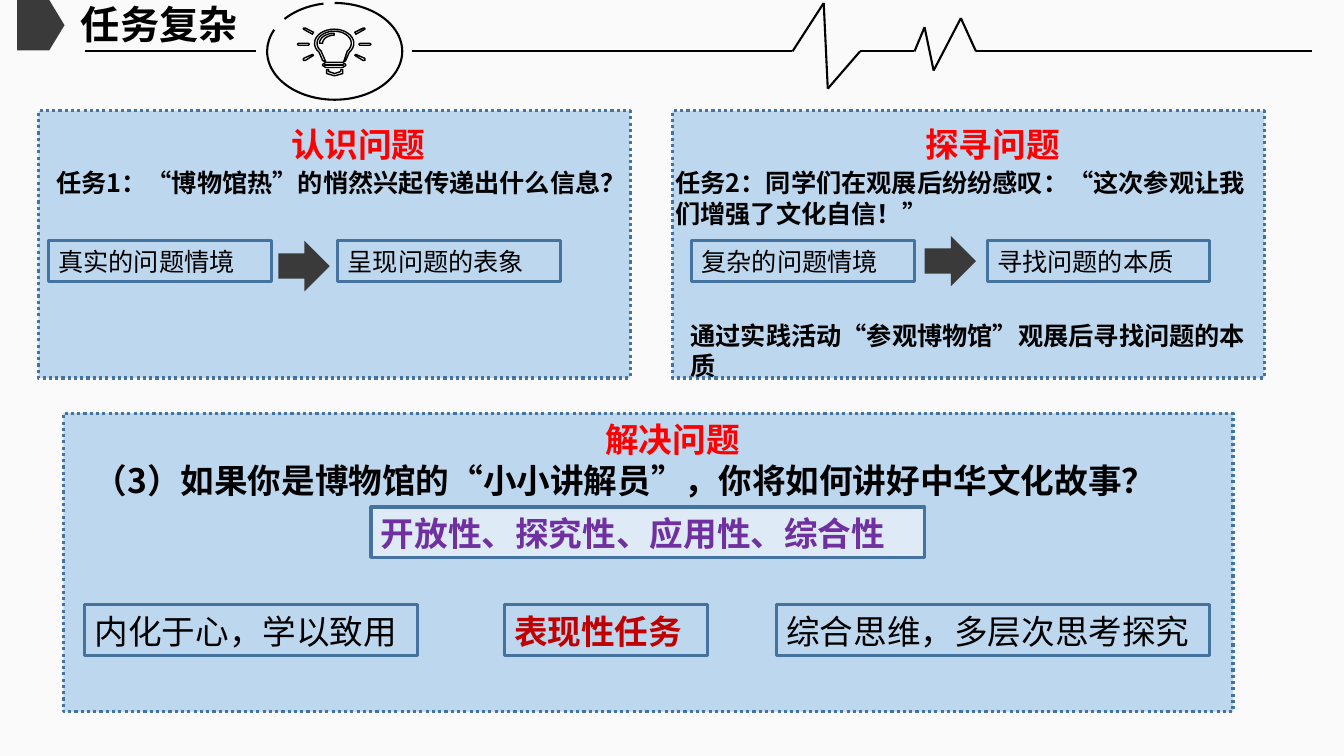
import itertools
import math

import lxml.etree
import pptx
import pptx.dml.color
import pptx.enum.dml
import pptx.enum.lang
import pptx.enum.shapes
import pptx.enum.text
import pptx.oxml.ns
import pptx.util

Inches = pptx.util.Inches
RGBColor = pptx.dml.color.RGBColor
KIND = pptx.enum.shapes.MSO_SHAPE
ALIGN = pptx.enum.text.PP_ALIGN
BLACK = RGBColor(0x00, 0x00, 0x00)
WHITE = RGBColor(0xFF, 0xFF, 0xFF)
PAPER = RGBColor(0xFA, 0xFA, 0xFA)
DARK = RGBColor(0x3A, 0x3A, 0x3A)
SKY = RGBColor(0xBD, 0xD7, 0xEE)
PALE = RGBColor(0xDE, 0xEB, 0xF7)
BLUE = RGBColor(0x43, 0x73, 0x9E)
RED = RGBColor(0xFF, 0x00, 0x00)
BRICK = RGBColor(0xC0, 0x00, 0x00)
PURPLE = RGBColor(0x70, 0x30, 0xA0)
SANS = "Noto Sans CJK SC"
SERIF = "Times New Roman"

deck = pptx.Presentation()
deck.slide_width, deck.slide_height = Inches(13.33), Inches(7.5)
slide = deck.slides.add_slide(deck.slide_layouts[5])
slide.background.fill.solid()
slide.background.fill.fore_color.rgb = PAPER
shapes = slide.shapes


def write(part, text, size, color=BLACK, bold=False, face=SANS, align=ALIGN.LEFT):
    frame = part.text_frame
    frame.word_wrap = True
    frame.auto_size = pptx.enum.text.MSO_AUTO_SIZE.NONE
    frame.vertical_anchor = pptx.enum.text.MSO_ANCHOR.TOP
    para = frame.add_paragraph() if frame.text else frame.paragraphs[0]
    para.alignment = align
    para.line_spacing = pptx.util.Pt(round(size * 1.22, 1))
    run = para.add_run()
    run.text = text
    look = {
        "size": pptx.util.Pt(size),
        "bold": bold,
        "name": face,
        "language_id": pptx.enum.lang.MSO_LANGUAGE_ID.SIMPLIFIED_CHINESE,
    }
    for key, value in look.items():
        setattr(run.font, key, value)
    run.font.color.rgb = color
    east = lxml.etree.SubElement(run.font._element, pptx.oxml.ns.qn("a:ea"))
    east.set("typeface", SANS)
    return para


def draw(kind, place, fill=None, line=None, width=2.25):
    part = shapes.add_shape(kind, *map(Inches, place))
    part.shadow.inherit = False
    if fill is None:
        part.fill.background()
    else:
        part.fill.solid()
        part.fill.fore_color.rgb = fill
    if line is None:
        part.line.fill.background()
    else:
        part.line.color.rgb = line
        part.line.width = pptx.util.Pt(width)
    return part


panels = [
    ((6.67, 1.1, 5.87, 2.65), "探寻问题", 0.12),
    ((0.38, 1.1, 5.87, 2.65), "认识问题", 0.12),
    ((0.63, 4.1, 11.6, 2.96), "解决问题", 0.05),
]
for place, text, top in panels:
    panel = draw(KIND.RECTANGLE, place, SKY, BLUE)
    panel.line.dash_style = pptx.enum.dml.MSO_LINE.ROUND_DOT
    panel.text_frame.margin_top = Inches(top)
    para = write(panel, text, 24, RED, True, SERIF, ALIGN.CENTER)
    para._p.get_or_add_pPr().set("marL", str(Inches(0.48)))
quest = "（3）如果你是博物馆的“小小讲解员”，你将如何讲好中华文化故事？"
para = write(panel, quest, 24, bold=True)
para._p.get_or_add_pPr().set("indent", str(Inches(0.2)))

title = shapes.title
spot = {"left": 0, "top": -0.06, "width": 3.16, "height": 0.57}
for key, value in spot.items():
    setattr(title, key, Inches(value))
write(title, "任务复杂", 28, bold=True, align=ALIGN.CENTER)

tag = draw(KIND.PENTAGON, (0.17, 0, 0.47, 0.5), DARK)
tag.adjustments[0] = 0.322

pulse = [
    (4.09, 0.51), (7.86, 0.51), (8.17, 0.03), (8.21, 0.88), (8.53, 0.51), (9.07, 0.51),
    (9.17, 0.27), (9.26, 0.7), (9.53, 0.18), (9.68, 0.51), (13.01, 0.51),
]
for start, end in [((0.84, 0.51), (2.54, 0.51)), *itertools.pairwise(pulse)]:
    wire = shapes.add_connector(
        pptx.enum.shapes.MSO_CONNECTOR.STRAIGHT, *map(Inches, start + end)
    )
    wire.line.color.rgb = BLACK
    wire.line.width = pptx.util.Pt(1.5)
    lxml.etree.SubElement(wire._element.spPr, pptx.oxml.ns.qn("a:effectLst"))

for first, last in [(127.69, 154.04), (162, 119.82)]:
    ring = draw(KIND.ARC, (2.65, 0.03, 1.34, 0.96), None, BLACK, 1.5)
    ring.adjustments[0], ring.adjustments[1] = first, last

curves = []
for wide, high, first, last in [
    (0.195, 0.14, 140, 400), (0.17, 0.12, 400, 140),
    (0.145, 0.1, 180, 270), (0.115, 0.08, 270, 180),
]:
    turns = [math.radians(first + (last - first) * i / 24) for i in range(25)]
    curves.append([(3.315 + wide * math.cos(t), 0.43 + high * math.sin(t)) for t in turns])
outer, inner, shine, under = curves
bulb = [
    outer + [(3.43, 0.6), (3.42, 0.61), (3.41, 0.61)]
    + inner + [(3.23, 0.61), (3.22, 0.61), (3.2, 0.6)],
    shine + under,
    [(3.23, 0.62), (3.4, 0.62), (3.43, 0.64), (3.43, 0.65), (3.4, 0.67), (3.23, 0.67),
     (3.2, 0.65), (3.2, 0.64)],
    [(3.22, 0.64), (3.41, 0.64), (3.41, 0.65), (3.22, 0.65)],
    [(3.24, 0.69), (3.26, 0.69), (3.26, 0.71), (3.32, 0.73), (3.38, 0.71), (3.38, 0.69),
     (3.4, 0.69), (3.4, 0.73), (3.33, 0.75), (3.31, 0.75), (3.24, 0.73)],
]
rays = [
    [(3.53, 0.54), (3.62, 0.58), (3.62, 0.6), (3.6, 0.6), (3.52, 0.55)],
    [(3.57, 0.43), (3.67, 0.43), (3.68, 0.44), (3.67, 0.45), (3.57, 0.45), (3.56, 0.44)],
    [(3.6, 0.28), (3.62, 0.28), (3.62, 0.29), (3.53, 0.34), (3.52, 0.32)],
]
for ray in rays:
    bulb += [ray, [(6.63 - x, y) for x, y in ray]]
grid = [[(x * 10000, y * 10000) for x, y in loop] for loop in bulb]
path = shapes.build_freeform(*grid[0][0], scale=Inches(1) / 10000)
path.add_line_segments(grid[0][1:])
for loop in grid[1:]:
    path.move_to(*loop[0])
    path.add_line_segments(loop[1:])
lamp = path.convert_to_shape()
lamp.shadow.inherit = False
lamp.fill.solid()
lamp.fill.fore_color.rgb = WHITE
tint = lamp._element.spPr.find(".//" + pptx.oxml.ns.qn("a:srgbClr"))
lxml.etree.SubElement(tint, pptx.oxml.ns.qn("a:alpha")).set("val", "50000")
lamp.line.color.rgb = BLACK
lamp.line.width = pptx.util.Pt(1)

notes = [
    ((0.46, 1.61, 6, 0.71), "任务1：“博物馆热”的悄然兴起传递出什么信息？"),
    ((6.6, 1.61, 6, 0.71), "任务2：同学们在观展后纷纷感叹：“这次参观让我们增强了文化自信！”"),
    ((6.75, 3.12, 5.79, 0.4), "通过实践活动“参观博物馆”观展后寻找问题的本质"),
]
for place, text in notes:
    write(shapes.add_textbox(*map(Inches, place)), text, 18, bold=True)

for place in [(2.76, 2.39, 0.51, 0.5), (9.17, 2.34, 0.51, 0.5)]:
    draw(KIND.RIGHT_ARROW, place, DARK)

steps = [
    (0.48, "真实的问题情境"), (3.35, "呈现问题的表象"),
    (6.86, "复杂的问题情境"), (9.79, "寻找问题的本质"),
]
for left, text in steps:
    write(draw(KIND.RECTANGLE, (left, 2.39, 2.21, 0.4), None, BLUE), text, 18)

goals = [
    ((5, 6, 2.02, 0.5), "表现性任务", None, BRICK, True),
    ((3.68, 5.03, 5.49, 0.5), "开放性、探究性、应用性、综合性", PALE, PURPLE, True),
    ((0.84, 6, 3.3, 0.5), "内化于心，学以致用", None, BLACK, False),
    ((7.7, 6, 4.3, 0.5), "综合思维，多层次思考探究", None, BLACK, False),
]
for place, text, fill, color, bold in goals:
    write(draw(KIND.RECTANGLE, place, fill, BLUE), text, 24, color, bold)

deck.save("out.pptx")
